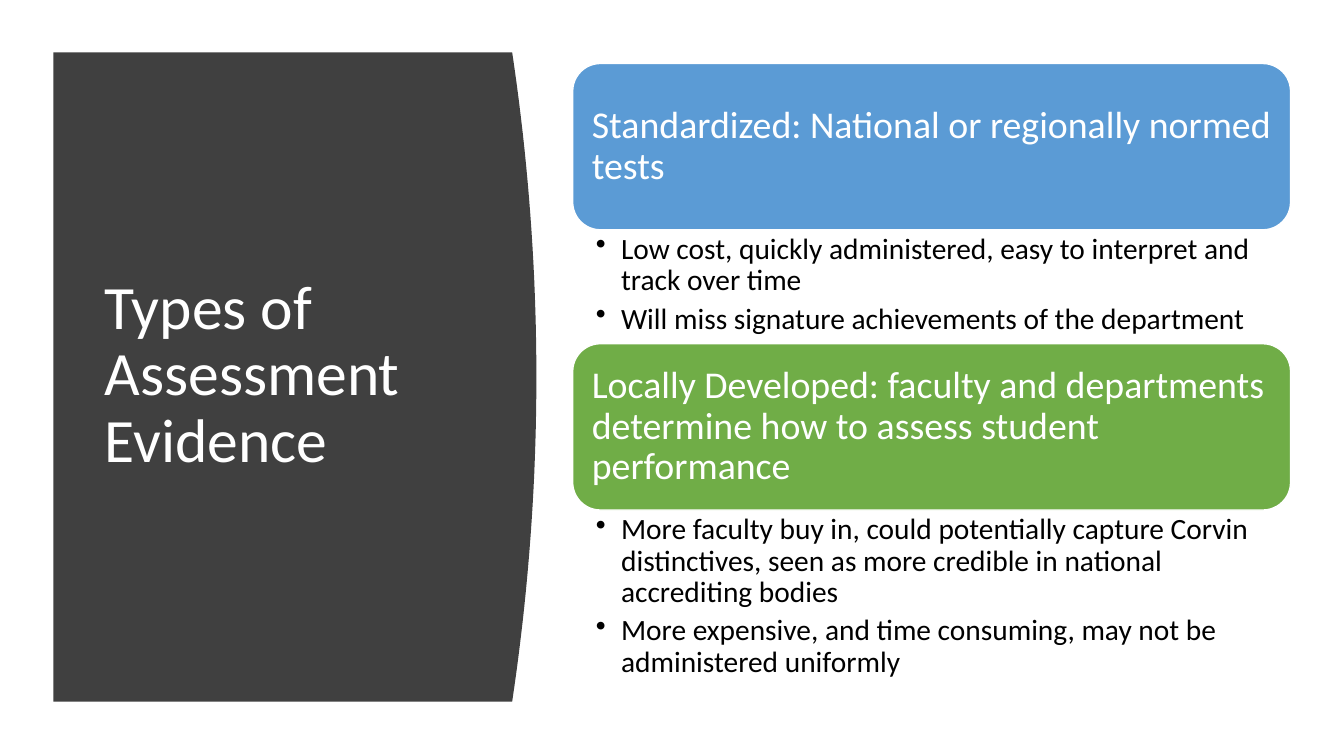
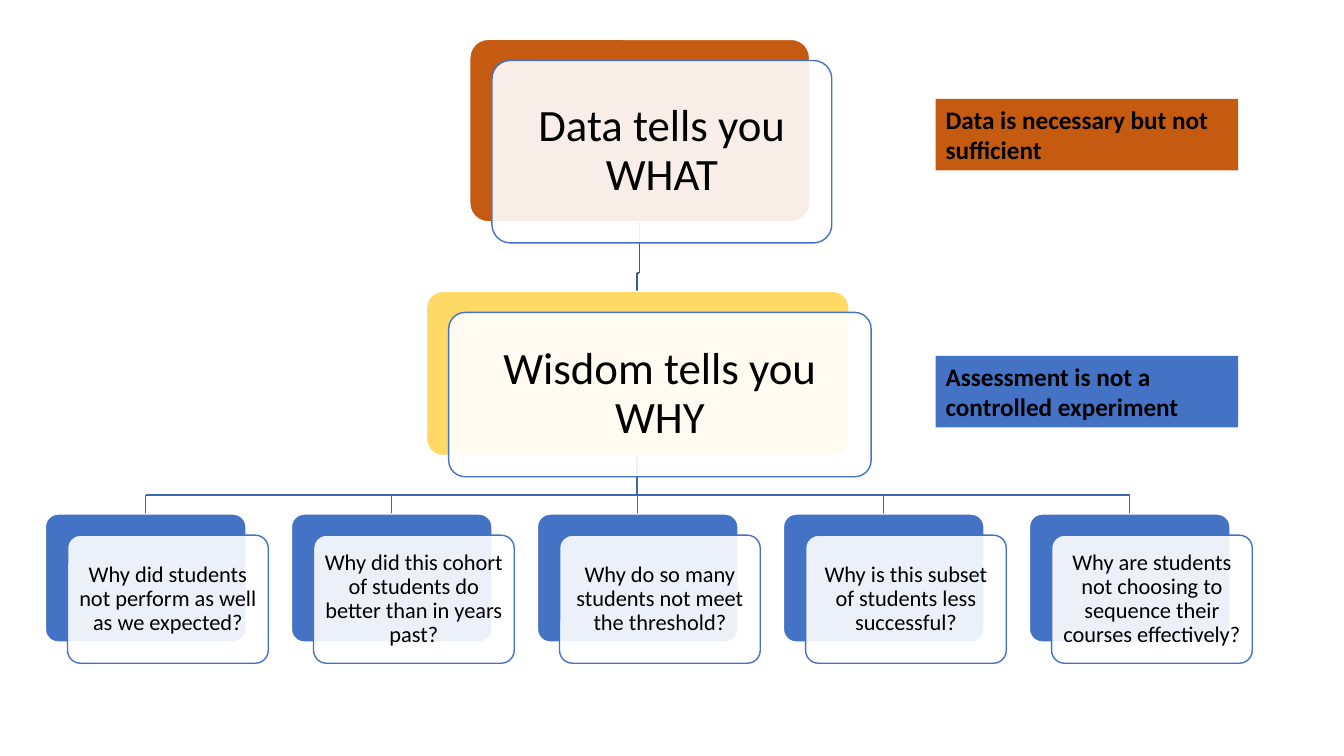
from pptx import Presentation
from pptx import util as u
from pptx.dml.color import RGBColor
from pptx.enum import shapes, text
from pptx.oxml import ns
from lxml import etree

WHITE = RGBColor(0xFF, 0xFF, 0xFF)
BLACK = RGBColor(0x00, 0x00, 0x00)
CHARCOAL = RGBColor(0x40, 0x40, 0x40)
SKY = RGBColor(0x5B, 0x9B, 0xD5)
GREEN = RGBColor(0x70, 0xAD, 0x47)
BLUE = RGBColor(0x44, 0x72, 0xC4)
BRANCH_BLUE = RGBColor(0x3E, 0x67, 0xB2)
STEM_BLUE = RGBColor(0x36, 0x5B, 0x9D)
ORANGE = RGBColor(0xC5, 0x5A, 0x11)
YELLOW = RGBColor(0xFF, 0xD9, 0x66)

MIDDLE = text.MSO_ANCHOR.MIDDLE
CENTER = text.PP_ALIGN.CENTER
RECTANGLE = shapes.MSO_SHAPE.RECTANGLE
ROUNDED = shapes.MSO_SHAPE.ROUNDED_RECTANGLE


class Deck:
    """Holds the shared style and the current slide."""

    font_name = "Calibri"
    card_offset = 0.22

    def __init__(self):
        self.presentation = Presentation()
        self.presentation.slide_width = u.Inches(13.33)
        self.presentation.slide_height = u.Inches(7.5)
        self.slide = None

    def new_slide(self):
        self.slide = self.presentation.slides.add_slide(self.presentation.slide_layouts[6])

    def set_text(self, shape, lines, size, color, insets=(0.1, 0.05, 0.1, 0.05),
                 anchor=MIDDLE, align=text.PP_ALIGN.LEFT, spacing=0.9, after=0,
                 bold=False, bullets=False):
        frame = shape.text_frame
        sides = ("margin_left", "margin_top", "margin_right", "margin_bottom")
        frame_format = {side: u.Inches(inset) for side, inset in zip(sides, insets)}
        frame_format.update(word_wrap=True, vertical_anchor=anchor)
        paragraph_format = {"alignment": align, "line_spacing": spacing,
                            "space_after": u.Pt(after)}
        font_format = {"name": self.font_name, "size": u.Pt(size), "bold": bold}
        for name, value in frame_format.items():
            setattr(frame, name, value)
        for index, line in enumerate(lines):
            paragraph = frame.add_paragraph() if index else frame.paragraphs[0]
            for name, value in paragraph_format.items():
                setattr(paragraph, name, value)
            run = paragraph.add_run()
            run.text = line
            for name, value in font_format.items():
                setattr(run.font, name, value)
            run.font.color.rgb = color
            if bullets:
                self.bullet(paragraph)

    def bullet(self, paragraph):
        properties = paragraph._p.get_or_add_pPr()
        properties.set("marL", str(u.Inches(0.25)))
        properties.set("indent", str(u.Inches(-0.25)))
        etree.SubElement(properties, ns.qn("a:buChar")).set("char", "•")

    def paint(self, shape, fill, line=None):
        shape.shadow.inherit = False
        shape.fill.solid()
        shape.fill.fore_color.rgb = fill
        if line is None:
            shape.line.fill.background()
        else:
            shape.line.color.rgb = line
            shape.line.width = u.Pt(1)

    def box(self, kind, place, fill, line=None, corner=None):
        shape = self.slide.shapes.add_shape(kind, *map(u.Inches, place))
        self.paint(shape, fill, line)
        if corner is not None:
            shape.adjustments[0] = corner
        return shape

    def text_box(self, place, lines, size, color, **style):
        shape = self.slide.shapes.add_textbox(*map(u.Inches, place))
        self.set_text(shape, lines, size, color, **style)

    def curved_panel(self, left, top, edge, bottom, bulge, color, steps=40):
        """A panel whose right side bows outward by bulge."""
        points = []
        for step in range(steps + 1):
            share = step / steps
            x = edge + bulge * (1 - (2 * share - 1) ** 2)
            points.append((u.Inches(x), u.Inches(top + (bottom - top) * share)))
        points.append((u.Inches(left), u.Inches(bottom)))
        builder = self.slide.shapes.build_freeform(u.Inches(left), u.Inches(top))
        builder.add_line_segments(points, close=True)
        self.paint(builder.convert_to_shape(), color)

    def topic(self, top, heading, color, points, height):
        """A coloured heading with its bullets underneath."""
        left, width, heading_height = 5.68, 7.12, 1.65
        shape = self.box(ROUNDED, (left, top, width, heading_height), color, WHITE)
        self.set_text(shape, [heading], 27, WHITE, insets=(0.11,) * 4)
        self.text_box((left, top + heading_height, width, height), points, 21, BLACK,
                      insets=(0.23, 0.04, 0.21, 0.04), anchor=text.MSO_ANCHOR.TOP,
                      after=4.5, bullets=True)

    def polyline(self, points, color):
        for start, end in zip(points, points[1:]):
            connector = self.slide.shapes.add_connector(
                shapes.MSO_CONNECTOR.STRAIGHT, *map(u.Inches, start + end))
            connector.line.color.rgb = color
            connector.line.width = u.Pt(1)
            etree.SubElement(connector._element.spPr, ns.qn("a:effectLst"))

    def card(self, place, label, color, size, inset):
        """A coloured back plate and an offset, nearly white front with the label."""
        left, top, width, height = place
        self.box(ROUNDED, place, color, WHITE, corner=0.1)
        front_place = (left + self.card_offset, top + 0.21, width, height)
        front = self.box(ROUNDED, front_place, WHITE, BLUE, corner=0.1)
        fill_color = front._element.spPr.find(ns.qn("a:solidFill"))[0]
        etree.SubElement(fill_color, ns.qn("a:alpha")).set("val", "90000")
        self.set_text(front, [label], size, BLACK, insets=(inset,) * 4, align=CENTER)

    def tag(self, top, label, color):
        shape = self.box(RECTANGLE, (9.28, top, 3, 0.71), color)
        self.set_text(shape, [label], 18, BLACK, spacing=1.0, bold=True)


def evidence_slide(deck):
    deck.new_slide()
    # Title panel
    deck.curved_panel(0.53, 0.52, 5.08, 6.96, 0.24, CHARCOAL)
    deck.text_box((0.94, 1.11, 3.74, 5.24), ["Types of Assessment Evidence"], 44, WHITE)
    # Topics
    deck.topic(0.63, "Standardized: National or regionally normed tests", SKY, [
        "Low cost, quickly administered, easy to interpret and track over time",
        "Will miss signature achievements of the department"], 1.13)
    deck.topic(3.41, "Locally Developed: faculty and departments determine how to "
               "assess student performance", GREEN, [
                   "More faculty buy in, could potentially capture Corvin distinctives, "
                   "seen as more credible in national accrediting bodies",
                   "More expensive, and time consuming, may not be administered uniformly"],
               1.77)


def wisdom_slide(deck):
    deck.new_slide()
    questions = [
        "Why did students not perform as well as we expected?",
        "Why did this cohort of students do better than in years past?",
        "Why do so many students not meet the threshold?",
        "Why is this subset of students less successful?",
        "Why are students not choosing to sequence their courses effectively?",
    ]
    width, height, top = 1.99, 1.27, 5.1
    lefts = [0.45 + 2.44 * index for index in range(len(questions))]
    centers = [left + width / 2 for left in lefts]
    # Tree lines, behind the cards
    trunk, branch = 6.32, 4.91
    deck.polyline([(trunk, 4.52), (trunk, branch)], BRANCH_BLUE)
    deck.polyline([(centers[0], branch), (centers[-1], branch)], BRANCH_BLUE)
    for center in centers:
        deck.polyline([(center, branch), (center, top)], BRANCH_BLUE)
    deck.polyline([(6.34, 2.2), (6.34, 2.71), (trunk, 2.71), (trunk, 2.89)], STEM_BLUE)
    # Cards
    deck.card((4.66, 0.39, 3.37, 1.81), "Data tells you WHAT", ORANGE, 32, 0.13)
    deck.card((4.23, 2.89, 4.19, 1.63), "Wisdom tells you WHY", YELLOW, 32, 0.13)
    for left, question in zip(lefts, questions):
        deck.card((left, top, width, height), question, BLUE, 16, 0.07)
    # Side remarks
    deck.tag(0.98, "Data is necessary but not sufficient", ORANGE)
    deck.tag(3.53, "Assessment is not a controlled experiment", BLUE)


def main():
    deck = Deck()
    evidence_slide(deck)
    wisdom_slide(deck)
    deck.presentation.save("out.pptx")


if __name__ == "__main__":
    main()
